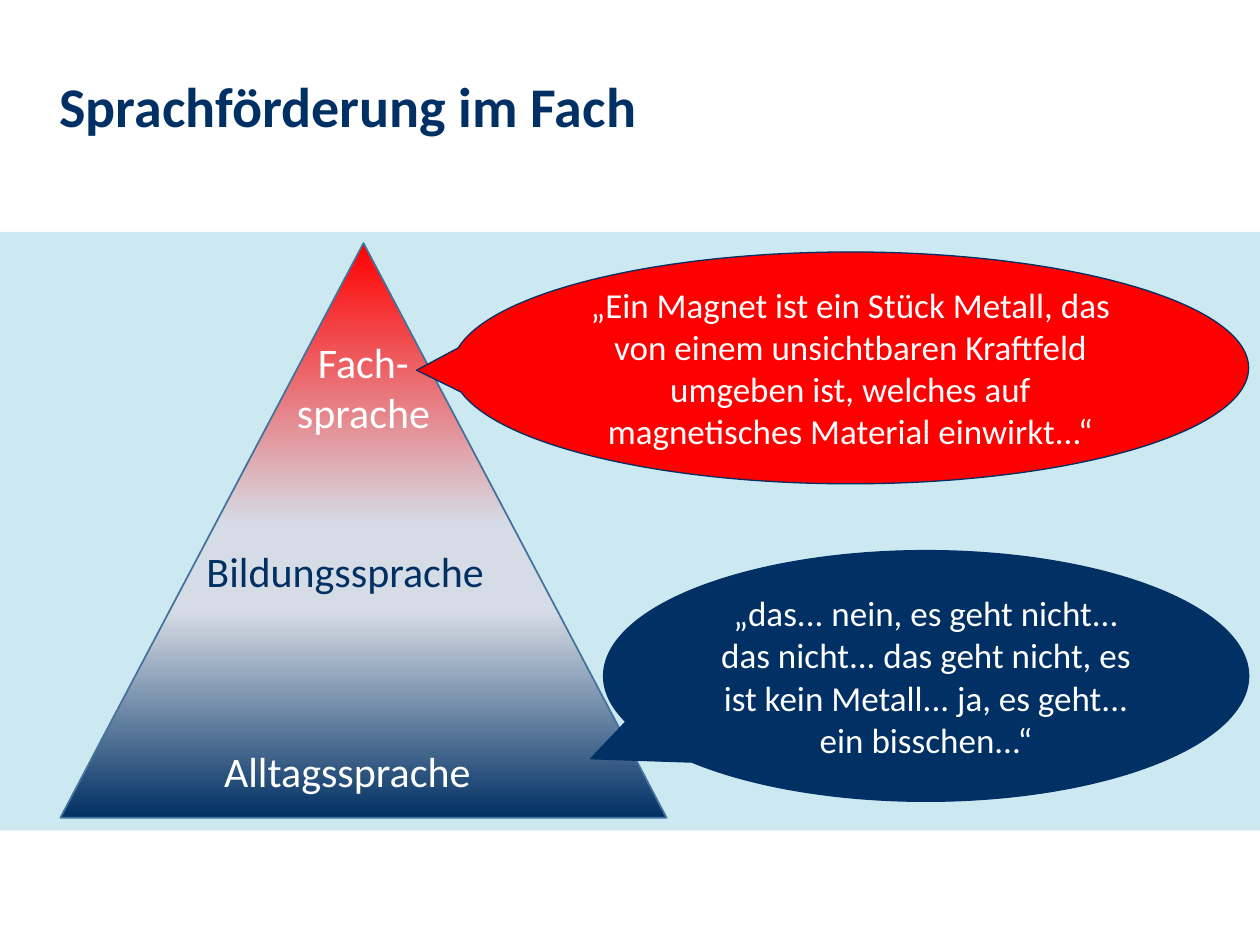
from copy import deepcopy
from dataclasses import dataclass

from pptx import Presentation
from pptx import util as u
from pptx.dml.color import RGBColor
from pptx.enum import shapes, text
from pptx.util import Inches

NAVY = RGBColor(0x00, 0x30, 0x64)
RED = RGBColor(0xFF, 0x00, 0x00)
WHITE = RGBColor(0xFF, 0xFF, 0xFF)
GREY = RGBColor(0xD6, 0xDC, 0xE5)
PALE_BLUE = RGBColor(0xCC, 0xE9, 0xF2)
EDGE_BLUE = RGBColor(0x43, 0x72, 0x9D)
FONT = "Calibri"


@dataclass
class Level:
    """A language level named inside the pyramid."""
    box: tuple[float, float, float, float]
    lines: list[str]
    color: RGBColor
    align: text.PP_ALIGN = text.PP_ALIGN.LEFT


@dataclass
class Bubble:
    """A spoken example that points at a level."""
    box: tuple[float, float, float, float]
    tip: tuple[float, float]
    fill: RGBColor
    quote: str


LEVELS = [
    Level((1.68, 5.87, 2.18, 0.5), ["Alltagssprache"], WHITE),
    Level((1.54, 4.28, 2.42, 0.5), ["Bildungssprache"], NAVY),
    Level((2.25, 2.62, 1.27, 0.91), ["Fach-", "sprache"], WHITE, text.PP_ALIGN.CENTER),
]
BUBBLES = [
    Bubble((4.79, 4.37, 5.12, 1.99), (-0.52, 0.33), NAVY,
           "„das... nein, es geht nicht... das nicht... das geht nicht, es ist "
           "kein Metall... ja, es geht... ein bisschen...“"),
    Bubble((3.59, 2, 6.32, 1.84), (-0.545, 0.01), RED,
           "„Ein Magnet ist ein Stück Metall, das von einem unsichtbaren Kraftfeld "
           "umgeben ist, welches auf magnetisches Material einwirkt...“"),
]
PYRAMID_STOPS = [(0, RED), (0.49, GREY), (0.64, GREY), (1, NAVY)]


def inches(box: tuple[float, float, float, float]) -> list[u.Length]:
    return [Inches(value) for value in box]


def style(paragraph, size: int, color: RGBColor, align: text.PP_ALIGN) -> None:
    paragraph.alignment = align
    paragraph.font.name = FONT
    paragraph.font.size = u.Pt(size)
    paragraph.font.color.rgb = color


def fill_downwards(fill, stops: list[tuple[float, RGBColor]]) -> None:
    """Set a top-to-bottom gradient with any number of stops."""
    fill.gradient()
    fill.gradient_angle = 270
    stop_list = fill._fill._gradFill.gsLst
    while len(stop_list) < len(stops):
        stop_list.append(deepcopy(stop_list[0]))
    for stop, (position, color) in zip(fill.gradient_stops, stops):
        stop.position = position
        stop.color.rgb = color


def draw_level(parent, level: Level) -> None:
    frame = parent.add_textbox(*inches(level.box)).text_frame
    frame.word_wrap = False
    frame.auto_size = text.MSO_AUTO_SIZE.SHAPE_TO_FIT_TEXT
    frame.text = "\n".join(level.lines)
    for paragraph in frame.paragraphs:
        style(paragraph, 24, level.color, level.align)


def draw_bubble(parent, bubble: Bubble) -> None:
    callout = parent.add_shape(shapes.MSO_SHAPE.OVAL_CALLOUT, *inches(bubble.box))
    callout.shadow.inherit = False
    callout.adjustments[0], callout.adjustments[1] = bubble.tip
    callout.fill.solid()
    callout.fill.fore_color.rgb = bubble.fill
    callout.line.color.rgb = NAVY
    callout.line.width = u.Pt(0.75)
    frame = callout.text_frame
    frame.word_wrap = True
    frame.vertical_anchor = text.MSO_ANCHOR.MIDDLE
    frame.text = bubble.quote
    style(frame.paragraphs[0], 20, WHITE, text.PP_ALIGN.CENTER)


def main() -> None:
    deck = Presentation()
    deck.slide_width, deck.slide_height = Inches(10), Inches(7.5)
    slide = deck.slides.add_slide(deck.slide_layouts[5])

    # Title
    title = slide.shapes.title
    title.left, title.top, title.width, title.height = inches((0.37, 0.52, 4.92, 0.76))
    heading = title.text_frame
    heading.text = "Sprachförderung im Fach"
    heading.word_wrap = False
    heading.auto_size = text.MSO_AUTO_SIZE.NONE
    heading.vertical_anchor = text.MSO_ANCHOR.TOP
    style(heading.paragraphs[0], 32, NAVY, text.PP_ALIGN.LEFT)
    heading.paragraphs[0].font.bold = True

    # Background band
    band = slide.shapes.add_shape(shapes.MSO_SHAPE.RECTANGLE, *inches((0, 1.84, 10, 4.75)))
    band.shadow.inherit = False
    band.fill.solid()
    band.fill.fore_color.rgb = PALE_BLUE
    band.line.fill.background()

    # Pyramid with its language levels
    group = slide.shapes.add_group_shape().shapes
    pyramid = group.add_shape(shapes.MSO_SHAPE.ISOSCELES_TRIANGLE,
                              *inches((0.48, 1.93, 4.81, 4.56)))
    pyramid.shadow.inherit = False
    fill_downwards(pyramid.fill, PYRAMID_STOPS)
    pyramid.line.color.rgb = EDGE_BLUE
    pyramid.line.width = u.Pt(1)
    for level in LEVELS:
        draw_level(group, level)

    # Spoken examples
    for bubble in BUBBLES:
        draw_bubble(slide.shapes, bubble)

    deck.save("out.pptx")


if __name__ == "__main__":
    main()
